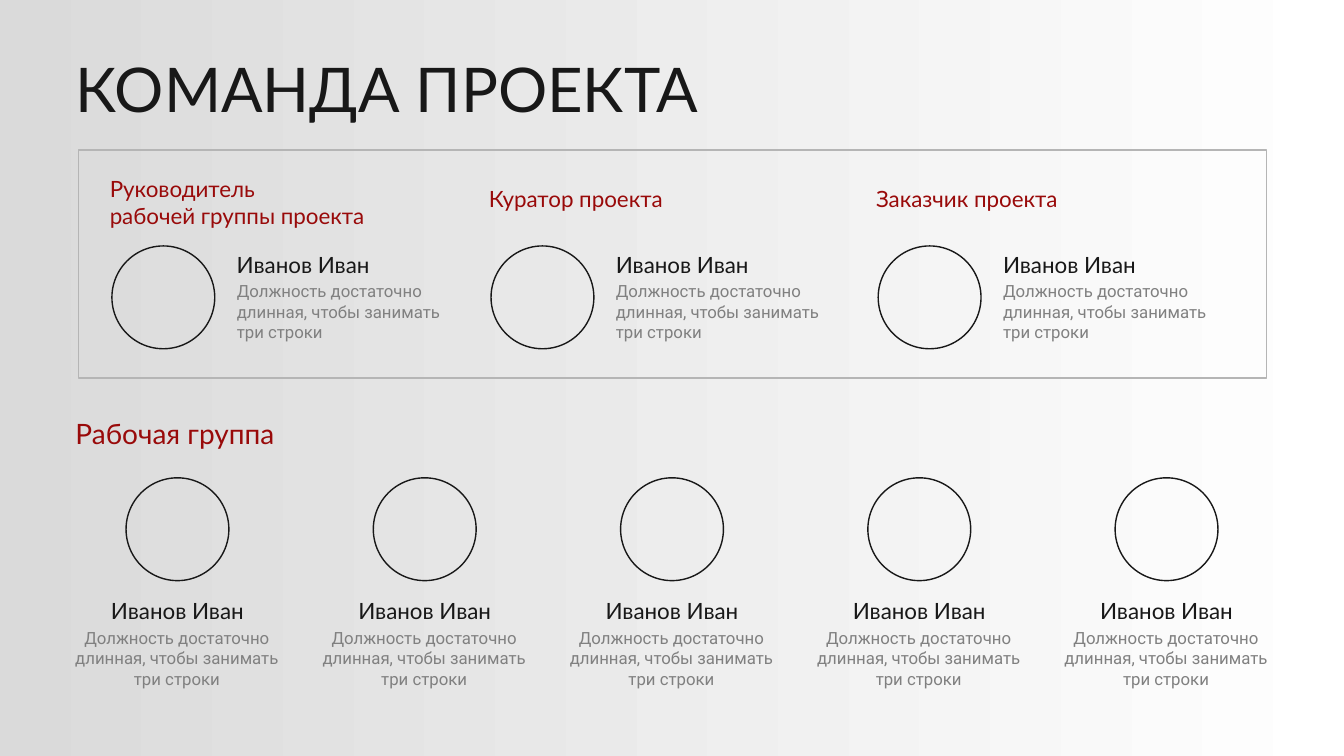
from pptx import Presentation
from pptx.dml.color import RGBColor
from pptx.enum.shapes import MSO_SHAPE
from pptx.enum.text import MSO_ANCHOR, MSO_AUTO_SIZE, PP_ALIGN
from pptx.util import Inches, Pt

COLORS = {
    "ink": "181818",
    "red": "990A0A",
    "gray": "808080",
    "frame": "B5B5B5",
    "dim": "DADADA",
    "white": "FFFFFF",
}
NAME = "Иванов Иван"
ROLE = "Должность достаточно длинная, чтобы занимать три строки"
LEADS = [
    (0.99, 1.69, 0.64, ["Руководитель", "рабочей группы проекта"]),
    (4.75, 1.79, 0.37, ["Куратор проекта"]),
    (8.59, 1.79, 0.37, ["Заказчик проекта"]),
]
COUNT = 5
FIRST, LAST = 1.25, 11.06


class Board:
    head = "Lato"
    body = "Roboto"

    def __init__(self, deck):
        self.slide = deck.slides.add_slide(deck.slide_layouts[5])
        self.shapes = self.slide.shapes

    def color(self, key):
        return RGBColor.from_string(COLORS[key])

    def style(self, par, size, key, font, align=PP_ALIGN.LEFT):
        par.alignment = align
        par.font.size = Pt(size)
        par.font.name = font
        par.font.color.rgb = self.color(key)

    def shape(self, kind, left, top, width, height, line=None):
        item = self.shapes.add_shape(
            kind, Inches(left), Inches(top), Inches(width), Inches(height)
        )
        item.shadow.inherit = False
        item.fill.background()
        if line:
            item.line.color.rgb = self.color(line)
            item.line.width = Pt(1)
        else:
            item.line.fill.background()
        return item

    def backdrop(self):
        item = self.shape(MSO_SHAPE.RECTANGLE, 0, 0, 13.33, 7.5)
        item.fill.gradient()
        item.fill.gradient_angle = 0
        for stop, key in zip(item.fill.gradient_stops, ("dim", "white")):
            stop.color.rgb = self.color(key)

    def title(self, text):
        item = self.shapes.title
        item.left, item.top = Inches(0.65), Inches(0.52)
        item.width, item.height = Inches(12.67), Inches(0.79)
        frame = item.text_frame
        frame.text = text
        frame.auto_size = MSO_AUTO_SIZE.NONE
        frame.vertical_anchor = MSO_ANCHOR.MIDDLE
        par = frame.paragraphs[0]
        par.line_spacing = 0.9
        self.style(par, 44, "ink", self.head)
        item._element.getparent().append(item._element)

    def frame(self, left, top, width, height):
        item = self.shape(
            MSO_SHAPE.ROUNDED_RECTANGLE, left, top, width, height, "frame"
        )
        item.adjustments[0] = 0

    def text(self, left, top, width, height, lines, *style):
        box = self.shapes.add_textbox(
            Inches(left), Inches(top), Inches(width), Inches(height)
        )
        frame = box.text_frame
        frame.word_wrap = True
        frame.auto_size = MSO_AUTO_SIZE.SHAPE_TO_FIT_TEXT
        frame.text = "\n".join(lines)
        for par in frame.paragraphs:
            self.style(par, *style)

    def circle(self, left, top):
        self.shape(MSO_SHAPE.OVAL, left, top, 1.02, 1.02, "ink")

    def label(self, name_left, name_top, role_left, role_top, align):
        self.text(name_left, name_top, 2.5, 0.37, [NAME], 16, "ink", self.head, align)
        self.text(role_left, role_top, 2.29, 0.71, [ROLE], 12, "gray", self.body, align)

    def lead(self, left, top, height, lines):
        self.text(left, top, 3.09, height, lines, 16, "red", self.head)
        self.circle(left + 0.12, 2.44)
        self.label(left + 1.26, 2.44, left + 1.26, 2.74, PP_ALIGN.LEFT)

    def member(self, left):
        self.circle(left, 4.74)
        self.label(left - 0.74, 5.87, left - 0.64, 6.18, PP_ALIGN.CENTER)


def main():
    deck = Presentation()
    deck.slide_width = Inches(13.33)
    deck.slide_height = Inches(7.5)
    board = Board(deck)
    board.backdrop()
    board.title("КОМАНДА ПРОЕКТА")
    board.frame(0.78, 1.49, 11.78, 2.26)
    for lead in LEADS:
        board.lead(*lead)
    board.text(0.65, 4.08, 3.09, 0.44, ["Рабочая группа"], 20, "red", board.head)
    step = (LAST - FIRST) / (COUNT - 1)
    for index in range(COUNT):
        board.member(FIRST + index * step)
    deck.save("out.pptx")


if __name__ == "__main__":
    main()
